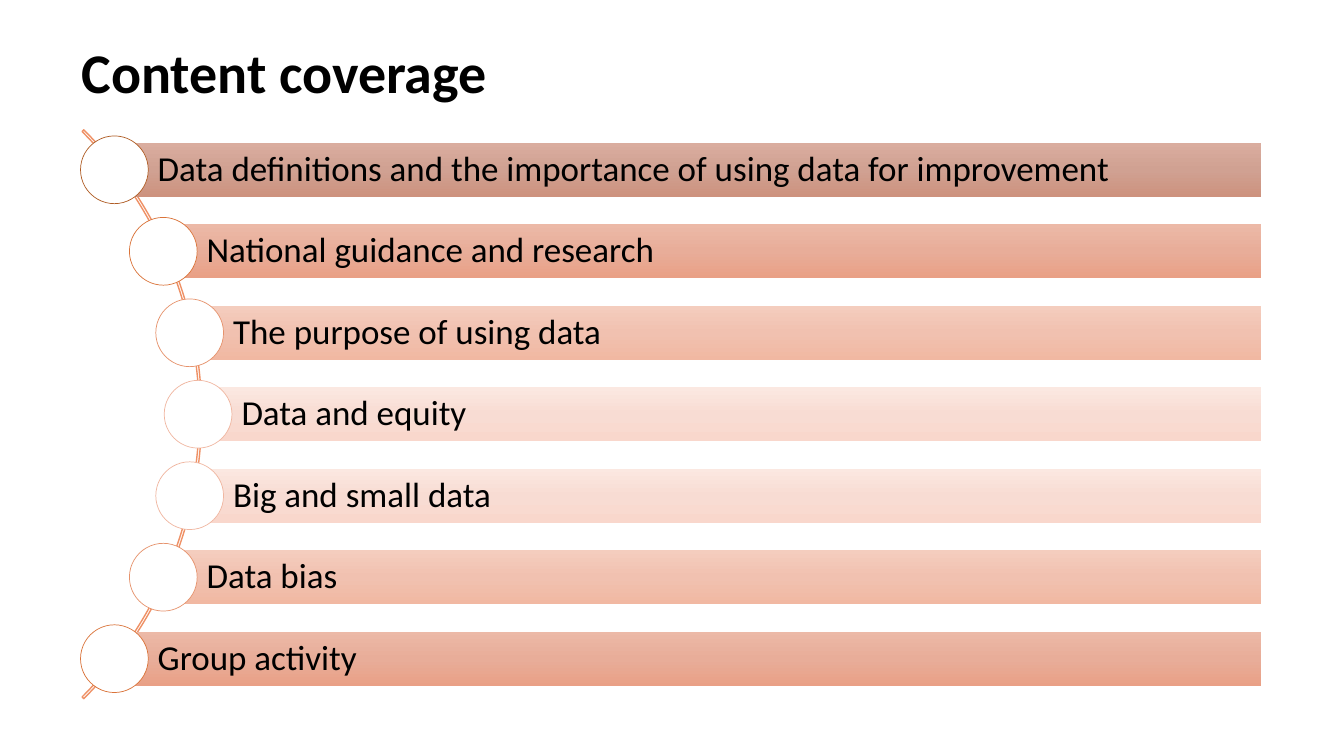
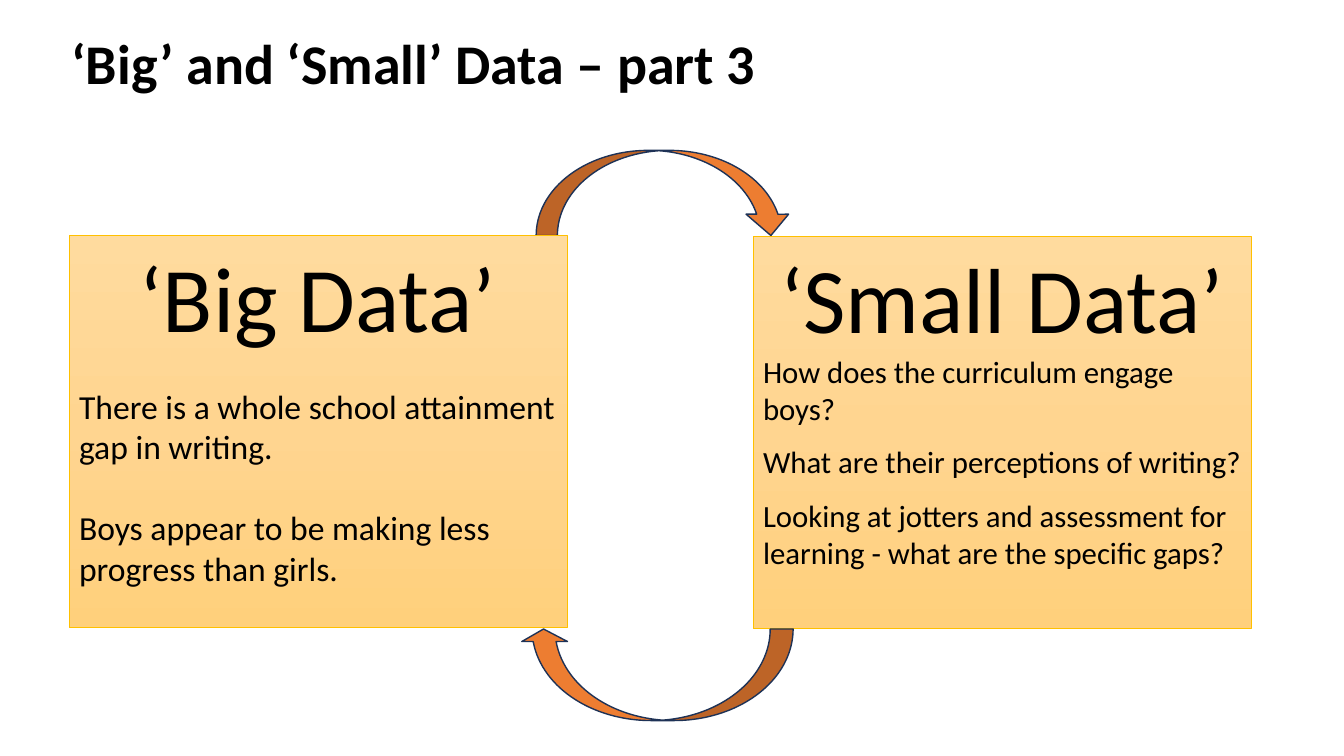
from copy import deepcopy
from dataclasses import dataclass
from math import sqrt

from pptx import Presentation
from pptx.dml.color import RGBColor
from pptx.enum.shapes import MSO_SHAPE
from pptx.enum.text import MSO_ANCHOR, MSO_AUTO_SIZE, PP_ALIGN
from pptx.oxml.ns import qn
from pptx.util import Pt

RECTANGLE = MSO_SHAPE.RECTANGLE
OVAL = MSO_SHAPE.OVAL
BLOCK_ARC = MSO_SHAPE.BLOCK_ARC
ARROW_DOWN = MSO_SHAPE.CURVED_DOWN_ARROW
ARROW_UP = MSO_SHAPE.CURVED_UP_ARROW
TOP, MIDDLE = MSO_ANCHOR.TOP, MSO_ANCHOR.MIDDLE
LEFT, CENTER = PP_ALIGN.LEFT, PP_ALIGN.CENTER
NO_AUTOFIT = MSO_AUTO_SIZE.NONE
TITLE_ONLY = 5


@dataclass(frozen=True)
class Tone:
    stops: tuple
    outline: str


@dataclass(frozen=True)
class Theme:
    font: str = "Calibri"
    text: str = "000000"
    white: str = "FFFFFF"
    arc: str = "EF9166"
    arrow: str = "ED7D31"
    arrow_outline: str = "1E3256"
    dark: Tone = Tone(("DAAD9F", "D0A192", "CD927E"), "AF5C24")
    strong: Tone = Tone(("ECB9A7", "E8AD99", "E9A086"), "DA7339")
    medium: Tone = Tone(("F4CDBE", "F1C1B0", "F1B8A2"), "E6926C")
    light: Tone = Tone(("FBE8E1", "F8DCD3", "F9D7CC"), "F0B6A0")
    gold: Tone = Tone(("FFDB9E", "FFD590", "FFD07C"), "FFC000")
    title_size: float = 40
    topic_size: float = 25
    heading_size: float = 66
    big_size: float = 24
    small_size: float = 22


THEME = Theme()

TOPICS = (
    ("Data definitions and the importance of using data for improvement", THEME.dark),
    ("National guidance and research", THEME.strong),
    ("The purpose of using data", THEME.medium),
    ("Data and equity", THEME.light),
    ("Big and small data", THEME.light),
    ("Data bias", THEME.medium),
    ("Group activity", THEME.strong),
)


def rgb(color):
    return RGBColor.from_string(color)


def add_slide(deck, title, left, top, width):
    """Add a title-only slide and place its title."""
    slide = deck.slides.add_slide(deck.slide_layouts[TITLE_ONLY])
    box = slide.shapes.title
    box.left, box.top, box.width, box.height = Pt(left), Pt(top), Pt(width), Pt(39)
    frame = box.text_frame
    frame.text = title
    frame.auto_size = NO_AUTOFIT
    frame.word_wrap = True
    frame.vertical_anchor = MIDDLE
    format_para(frame.paragraphs[0], THEME.title_size)
    frame.paragraphs[0].font.bold = True
    return slide


def format_para(para, size, align=LEFT, before=0, after=0):
    para.alignment = align
    para.space_before, para.space_after = Pt(before), Pt(after)
    para.font.name = THEME.font
    para.font.size = Pt(size)
    para.font.color.rgb = rgb(THEME.text)


def add_shape(slide, kind, left, top, width, height, fill=None, line=None, weight=0.5):
    shape = slide.shapes.add_shape(kind, Pt(left), Pt(top), Pt(width), Pt(height))
    shape.shadow.inherit = False
    if fill:
        shape.fill.solid()
        shape.fill.fore_color.rgb = rgb(fill)
    else:
        shape.fill.background()
    if line:
        shape.line.color.rgb = rgb(line)
        shape.line.width = Pt(weight)
    else:
        shape.line.fill.background()
    return shape


def fill_gradient(shape, colors):
    """Fill from top to bottom with three evenly spaced colours."""
    shape.fill.gradient()
    shape.fill.gradient_angle = 270
    first = shape._element.spPr.find(".//" + qn("a:gs"))
    first.addnext(deepcopy(first))
    for index, (stop, color) in enumerate(zip(shape.fill.gradient_stops, colors)):
        stop.position = index / 2
        stop.color.rgb = rgb(color)


def add_topic(slide, text, tone, center_x, center_y):
    """A gradient bar with a circle over its left end."""
    bar_height, circle, bar_right = 38.7, 48.4, 900.7
    bar = add_shape(slide, RECTANGLE, center_x, center_y - bar_height / 2,
                    bar_right - center_x, bar_height)
    fill_gradient(bar, tone.stops)
    frame = bar.text_frame
    frame.word_wrap = True
    frame.margin_left = Pt(31)
    frame.margin_top = frame.margin_right = frame.margin_bottom = Pt(5)
    frame.text = text
    format_para(frame.paragraphs[0], THEME.topic_size)
    frame.paragraphs[0].line_spacing = 0.9
    add_shape(slide, OVAL, center_x - circle / 2, center_y - circle / 2,
              circle, circle, THEME.white, tone.outline)


def add_data_box(slide, left, top, heading, size, paras):
    """A gold panel; paras holds (text, space before, space after)."""
    box = add_shape(slide, RECTANGLE, left, top, 355.7, 280, line=THEME.gold.outline)
    fill_gradient(box, THEME.gold.stops)
    frame = box.text_frame
    frame.word_wrap = True
    frame.vertical_anchor = TOP
    frame.text = heading
    format_para(frame.paragraphs[0], THEME.heading_size, CENTER)
    for text, before, after in paras:
        para = frame.add_paragraph()
        para.text = text
        format_para(para, size, before=before, after=after)


def add_arrow(slide, kind, left, top, width, height):
    return add_shape(slide, kind, left, top, width, height,
                     THEME.arrow, THEME.arrow_outline, 1)


def build_contents(deck):
    slide = add_slide(deck, "Content coverage", 51.1, 31, 417.6)

    # Arc that the circles follow
    arc_x, arc_y, radius = -143.3, 295.9, 287.3
    arc = add_shape(slide, BLOCK_ARC, arc_x - radius, arc_y - radius,
                    2 * radius, 2 * radius, line=THEME.arc, weight=1)
    for index, value in enumerate((189, 27, 0.003)):
        arc.adjustments[index] = value

    # Topics, evenly spaced down the arc
    orbit, pitch = 284.8, 58.2
    for index, (text, tone) in enumerate(TOPICS):
        offset = (index - (len(TOPICS) - 1) / 2) * pitch
        center_x = arc_x + sqrt(orbit ** 2 - offset ** 2)
        add_topic(slide, text, tone, center_x, arc_y + offset)


def build_big_and_small(deck):
    slide = add_slide(deck, "‘Big’ and ‘Small’ Data – part 3", 43.9, 25.2, 594.7)

    # Arrow from big to small
    add_arrow(slide, ARROW_DOWN, 383, 107.4, 182.9, 60.8)

    # Panels
    add_data_box(slide, 49.4, 168.3, "‘Big Data’", THEME.big_size, (
        ("There is a whole school attainment gap in writing.", 24.4, 0),
        ("Boys appear to be making less progress than girls.", 29.3, 0),
    ))
    add_data_box(slide, 538, 169, "‘Small Data’", THEME.small_size, (
        ("How does the curriculum engage boys?", 0, 12),
        ("What are their perceptions of writing?", 0, 12),
        ("Looking at jotters and assessment for learning - what are the specific gaps?",
         0, 0),
    ))

    # Arrow back from small to big, mirrored
    back = add_arrow(slide, ARROW_UP, 371.9, 449.3, 194.6, 65.4)
    back.adjustments[2] = 0.137
    back._element.spPr.find(qn("a:xfrm")).set("flipH", "1")


def main():
    deck = Presentation()
    deck.slide_width, deck.slide_height = Pt(960), Pt(540)
    build_contents(deck)
    build_big_and_small(deck)
    deck.save("out.pptx")


if __name__ == "__main__":
    main()
